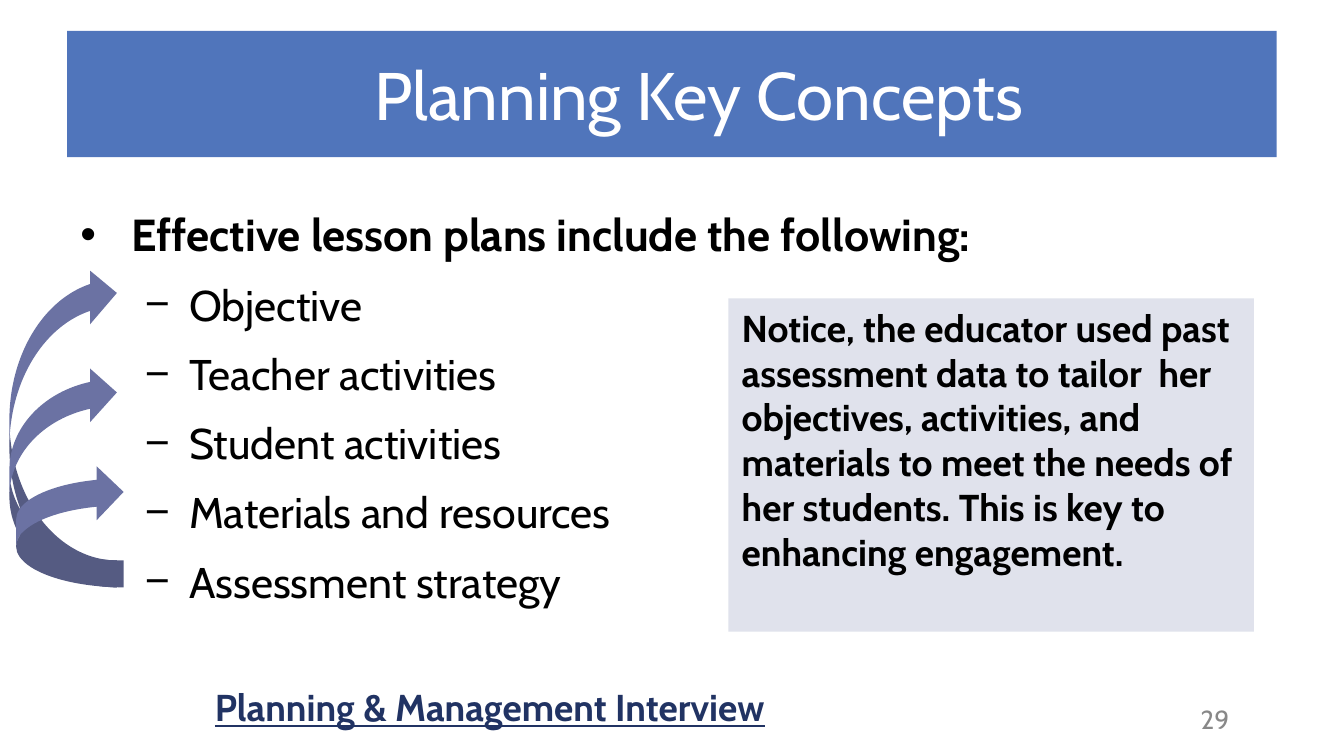
"""Build the Planning Key Concepts slide."""
from dataclasses import dataclass
from typing import Optional

from lxml import etree
from pptx import Presentation
from pptx import util as u
from pptx.dml.color import RGBColor
from pptx.enum import shapes, text
from pptx.oxml.ns import qn


@dataclass(frozen=True)
class Theme:
    face: str = "Cabin"
    mark: str = "Arial"
    ink: str = "000000"
    white: str = "FFFFFF"
    gray: str = "888888"
    blue: str = "5075BB"
    pale: str = "E0E2EC"
    arrow: str = "6B72A3"
    link: str = "213363"
    title: int = 36
    head: int = 24
    item: int = 23
    note: int = 20
    page: int = 14


@dataclass(frozen=True)
class Box:
    left: float
    top: float
    width: float
    height: float


@dataclass(frozen=True)
class Line:
    words: str
    size: int
    color: str
    bold: bool = False
    under: bool = False
    center: bool = False
    margin: float = 0
    indent: float = 0
    bullet: Optional[str] = None
    level: int = 0
    before: int = 0
    space: Optional[float] = None


T = Theme()
WIDTH = 10
ITEMS = ("Objective", "Teacher activities", "Student activities",
         "Materials and resources", "Assessment strategy")
NOTE = ("Notice, the educator used past assessment data to tailor  her "
        "objectives, activities, and materials to meet the needs of her "
        "students. This is key to enhancing engagement.")
BASE = 4.37
ARROWS = tuple(Box(left, top, 0.8, BASE - top)
               for left, top in ((0.07, 1.98), (0.07, 2.72), (0.12, 3.46)))


def place(box: Box) -> tuple:
    return tuple(u.Inches(n) for n in (box.left, box.top, box.width, box.height))


def draw(slide, kind, box: Box, fill: str):
    shape = slide.shapes.add_shape(kind, *place(box))
    shape.shadow.inherit = False
    shape.fill.solid()
    shape.fill.fore_color.rgb = RGBColor.from_string(fill)
    shape.line.fill.background()
    return shape


def style(para, line: Line) -> None:
    para.text = line.words
    para.level = line.level
    para.alignment = text.PP_ALIGN.CENTER if line.center else text.PP_ALIGN.LEFT
    props = para._p.get_or_add_pPr()
    props.set("marL", str(u.Inches(line.margin)))
    props.set("indent", str(u.Inches(line.indent)))
    if line.bullet:
        tint = etree.SubElement(props, qn("a:buClr"))
        etree.SubElement(tint, qn("a:srgbClr")).set("val", T.ink)
        etree.SubElement(props, qn("a:buFont")).set("typeface", T.mark)
        etree.SubElement(props, qn("a:buChar")).set("char", line.bullet)
    if line.space:
        para.line_spacing = line.space
    if line.before:
        para.space_before = u.Pt(line.before)
    font = para.font
    font.name, font.size = T.face, u.Pt(line.size)
    font.bold, font.underline = line.bold, line.under
    font.color.rgb = RGBColor.from_string(line.color)


def write(shape, lines: list[Line], middle: bool = False, left: float = 0.1) -> None:
    frame = shape.text_frame
    frame.word_wrap = True
    frame.margin_left, frame.margin_right = u.Inches(left), u.Inches(0.1)
    frame.margin_top = frame.margin_bottom = u.Inches(0.05)
    anchor = text.MSO_ANCHOR
    frame.vertical_anchor = anchor.MIDDLE if middle else anchor.TOP
    for spot, line in enumerate(lines):
        para = frame.add_paragraph() if spot else frame.paragraphs[0]
        style(para, line)


def bend(slide, box: Box) -> None:
    shape = draw(slide, shapes.MSO_SHAPE.CURVED_RIGHT_ARROW, box, T.arrow)
    for spot, value in enumerate((0.25, 0.5, 0.25)):
        shape.adjustments[spot] = value
    shape.rotation = 180
    shape._element.spPr.find(qn("a:xfrm")).set("flipH", "1")


def main() -> None:
    deck = Presentation()
    deck.slide_width, deck.slide_height = u.Inches(WIDTH), u.Inches(WIDTH * 9 / 16)
    slide = deck.slides.add_slide(deck.slide_layouts[6])
    rect = shapes.MSO_SHAPE.RECTANGLE

    page = slide.shapes.add_textbox(*place(Box(8.5, 5.2, 1.08, 0.3)))
    write(page, [Line("29", T.page, T.gray, center=True)], middle=True)

    body = slide.shapes.add_textbox(*place(Box(0.5, 1.41, 9, 3.38)))
    head = Line("Effective lesson plans include the following:", T.head, T.ink,
                bold=True, margin=0.38, indent=-0.38, bullet="•", space=1.2)
    items = [Line(name, T.item, T.ink, margin=0.81, indent=-0.33, bullet="−",
                  level=1, before=4, space=1.2) for name in ITEMS]
    link = Line("Planning & Management Interview", T.note, T.link, bold=True,
                under=True, margin=0.5, indent=0.5, before=37, space=1.2)
    write(body, [head, *items, link])

    title = draw(slide, rect, Box(0.5, 0.23, 9, 0.94), T.blue)
    write(title, [Line("Planning Key Concepts", T.title, T.white, center=True)],
          middle=True, left=0.5)

    note = draw(slide, rect, Box(5.42, 2.22, 3.91, 2.48), T.pale)
    write(note, [Line(NOTE, T.note, T.ink, bold=True)])

    for box in ARROWS:
        bend(slide, box)
    deck.save("out.pptx")


if __name__ == "__main__":
    main()
